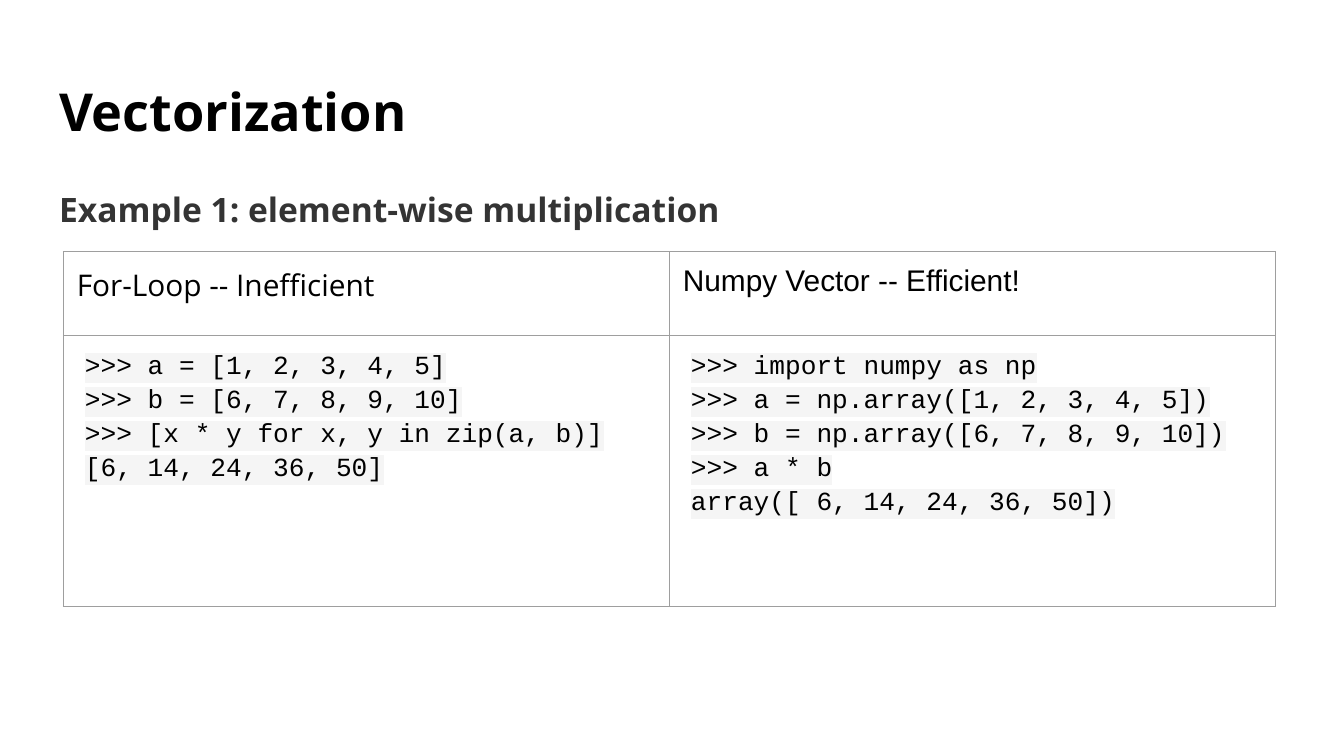
"""Builds a slide comparing a Python loop with a vectorized multiplication."""
import copy

import pptx
import pptx.dml.color
import pptx.enum.text
import pptx.oxml.ns
import pptx.oxml.xmlchemy
import pptx.util

Pt = pptx.util.Pt
qn = pptx.oxml.ns.qn
COLORS = {"black": "000000", "heading": "343434", "border": "9E9E9E", "code": "F5F5F5"}
MARGIN = Pt(7.2)
HEADERS = [("For-Loop -- Inefficient", "Open Sans"), ("Numpy Vector -- Efficient!", "Arial")]
LOOP_CODE = """>>> a = [1, 2, 3, 4, 5]
>>> b = [6, 7, 8, 9, 10]
>>> [x * y for x, y in zip(a, b)]
[6, 14, 24, 36, 50]"""
VECTOR_CODE = """>>> import numpy as np
>>> a = np.array([1, 2, 3, 4, 5])
>>> b = np.array([6, 7, 8, 9, 10])
>>> a * b
array([ 6, 14, 24, 36, 50])"""


def add_element(parent, tag, **attributes):
    element = pptx.oxml.xmlchemy.OxmlElement(tag)
    for name, value in attributes.items():
        element.set(name, value)
    parent.append(element)
    return element


def write_text(para, text, font, size, color="black", bold=False):
    para.text = text
    para.alignment = pptx.enum.text.PP_ALIGN.LEFT
    for span in para.runs:
        span.font.size = Pt(size)
        span.font.bold = bold
        span.font.color.rgb = pptx.dml.color.RGBColor.from_string(COLORS[color])
        span.font.name = font


def fill_placeholder(box, top, height, text, size, color):
    box.left, box.top, box.width, box.height = Pt(24.5), Pt(top), Pt(671), Pt(height)
    frame = box.text_frame
    frame.word_wrap = True
    frame.auto_size = pptx.enum.text.MSO_AUTO_SIZE.NONE
    frame.vertical_anchor = pptx.enum.text.MSO_ANCHOR.TOP
    frame.margin_left = frame.margin_right = frame.margin_top = frame.margin_bottom = MARGIN
    para = frame.paragraphs[0]
    write_text(para, text, "Open Sans", size, color, bold=True)
    para.space_before = Pt(0)
    return para


def remove_bullet(para):
    properties = para._p.get_or_add_pPr()
    properties.set("marL", "0")
    properties.set("indent", "0")
    add_element(properties, "a:buNone")


def write_code(para, code):
    write_text(para, code, "Courier New", 14)
    para.line_spacing = 1.15
    para.space_after = Pt(15)
    para._p.get_or_add_pPr().set("marL", str(Pt(4.3)))
    for span in para.runs:
        highlight = pptx.oxml.xmlchemy.OxmlElement("a:highlight")
        add_element(highlight, "a:srgbClr", val=COLORS["code"])
        span._r.rPr.find(qn("a:latin")).addprevious(highlight)
    for line_break in para._p.findall(qn("a:br")):
        line_break.append(copy.deepcopy(para.runs[0]._r.rPr))


def style_cell(cell):
    cell.margin_left = cell.margin_right = cell.margin_top = cell.margin_bottom = MARGIN
    properties = cell._tc.get_or_add_tcPr()
    for side in ("a:lnL", "a:lnR", "a:lnT", "a:lnB"):
        line = add_element(properties, side, w=str(Pt(0.75)))
        add_element(add_element(line, "a:solidFill"), "a:srgbClr", val=COLORS["border"])
    cell.fill.background()


def add_comparison(page):
    table = page.shapes.add_table(2, 2, Pt(34), Pt(134.8), Pt(649.4), Pt(190)).table
    table.first_row = table.horz_banding = False
    for row, height in zip(table.rows, (44.8, 145.2)):
        row.height = Pt(height)
    for cell in table.iter_cells():
        style_cell(cell)
    for column, (header, font) in enumerate(HEADERS):
        write_text(table.cell(0, column).text_frame.paragraphs[0], header, font, 16)
    for column, code in enumerate((LOOP_CODE, VECTOR_CODE)):
        write_code(table.cell(1, column).text_frame.paragraphs[0], code)


def main():
    deck = pptx.Presentation()
    deck.slide_width, deck.slide_height = Pt(720), Pt(405)
    page = deck.slides.add_slide(deck.slide_layouts[1])
    title, body = page.placeholders
    fill_placeholder(title, 35.3, 45.4, "Vectorization", 28, "black")
    para = fill_placeholder(body, 90.7, 269.3, "Example 1: element-wise multiplication", 18, "heading")
    para.line_spacing = 1.15
    para.space_after = Pt(16)
    remove_bullet(para)
    add_comparison(page)
    deck.save("out.pptx")


if __name__ == "__main__":
    main()
